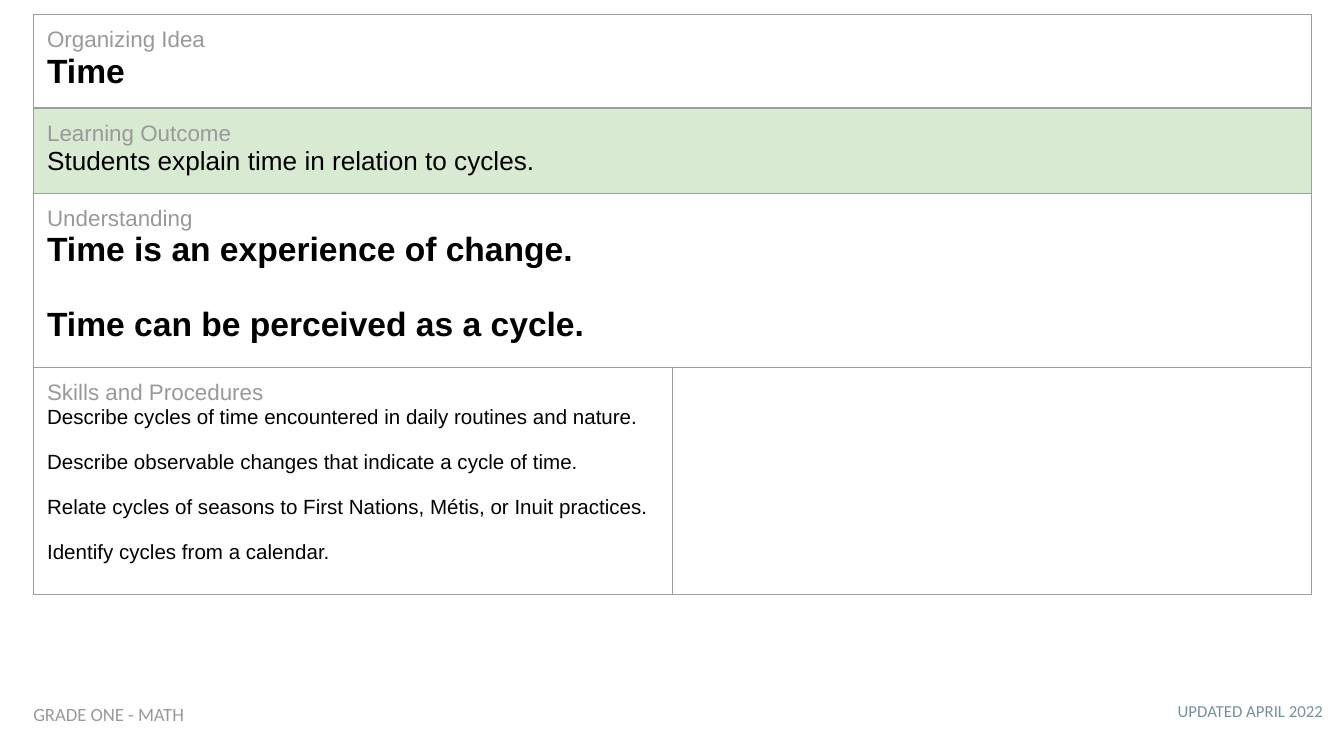
from lxml.etree import SubElement
from pptx import Presentation
from pptx.dml.color import RGBColor
from pptx.enum.text import MSO_AUTO_SIZE as AutoSize, PP_ALIGN as Align
from pptx.oxml.ns import qn
from pptx.util import Cm, Pt

COLORS = {
    "label": "999999",
    "text": "000000",
    "outcome": "D9EAD3",
    "border": "9E9E9E",
    "updated": "78909C",
}
INSET = Cm(0.25)
COLUMN_WIDTH = 12.07
ROW_HEIGHTS = [1.77, 1.61, 3.29, 4.29]

SECTIONS = [
    ("Organizing Idea", ["Time"], 18, True, 0),
    ("Learning Outcome", ["Students explain time in relation to cycles."], 14, False, 0),
    ("Understanding", [
        "Time is an experience of change.",
        "Time can be perceived as a cycle.",
    ], 18, True, 20),
    ("Skills and Procedures", [
        "Describe cycles of time encountered in daily routines and nature.",
        "Describe observable changes that indicate a cycle of time.",
        "Relate cycles of seasons to First Nations, Métis, or Inuit practices.",
        "Identify cycles from a calendar.",
    ], 11, False, 12),
]


def rgb(name):
    return RGBColor.from_string(COLORS[name])


def set_insets(box):
    box.margin_left = box.margin_right = INSET
    box.margin_top = box.margin_bottom = INSET


def write(p, text, size, color, font="Arial", bold=False):
    p.text = text
    for r in p.runs:
        r.font.name = font
        r.font.size = Pt(size)
        r.font.bold = bold
        r.font.color.rgb = rgb(color)


def add_borders(cell):
    tc_pr = cell._tc.get_or_add_tcPr()
    for side in ("lnL", "lnR", "lnT", "lnB"):
        line = SubElement(tc_pr, qn(f"a:{side}"), w=str(Pt(0.75)))
        fill = SubElement(line, qn("a:solidFill"))
        SubElement(fill, qn("a:srgbClr"), val=COLORS["border"])


def fill_section(cell, label, lines, size, bold, gap):
    tf = cell.text_frame
    write(tf.paragraphs[0], label, 12, "label")
    for i, line in enumerate(lines):
        p = tf.add_paragraph()
        write(p, line, size, "text", bold=bold)
        p.space_before = Pt(gap if i else 0)


def add_outcome_table(slide):
    frame = slide.shapes.add_table(
        len(SECTIONS), 2, Cm(0.64), Cm(0.27),
        Cm(2 * COLUMN_WIDTH), Cm(sum(ROW_HEIGHTS)))
    table = frame.table
    table.first_row = table.horz_banding = False
    for column in table.columns:
        column.width = Cm(COLUMN_WIDTH)
    for row, height in zip(table.rows, ROW_HEIGHTS):
        row.height = Cm(height)
    for cell in table.iter_cells():
        set_insets(cell)
        add_borders(cell)
        cell.fill.background()
    for i, section in enumerate(SECTIONS):
        if i < len(SECTIONS) - 1:
            table.cell(i, 0).merge(table.cell(i, 1))
        fill_section(table.cell(i, 0), *section)
    outcome = table.cell(1, 0)
    outcome.fill.solid()
    outcome.fill.fore_color.rgb = rgb("outcome")


def add_footer(slide, text, left, top, width, height, size, color, align):
    sp = slide.shapes.add_textbox(Cm(left), Cm(top), Cm(width), Cm(height))
    tf = sp.text_frame
    tf.word_wrap = True
    tf.auto_size = AutoSize.SHAPE_TO_FIT_TEXT
    set_insets(tf)
    p = tf.paragraphs[0]
    write(p, text, size, color, font="Calibri")
    p.alignment = align


def main():
    prs = Presentation()
    prs.slide_width = Cm(25.4)
    prs.slide_height = Cm(14.29)
    slide = prs.slides.add_slide(prs.slide_layouts[6])
    add_footer(slide, "UPDATED APRIL 2022", 18.39, 13.06, 6.86, 0.89,
               9, "updated", Align.RIGHT)
    add_outcome_table(slide)
    add_footer(slide, "GRADE ONE - MATH", 0.38, 13.08, 7.65, 0.94,
               10, "label", Align.LEFT)
    prs.save("out.pptx")


if __name__ == "__main__":
    main()
